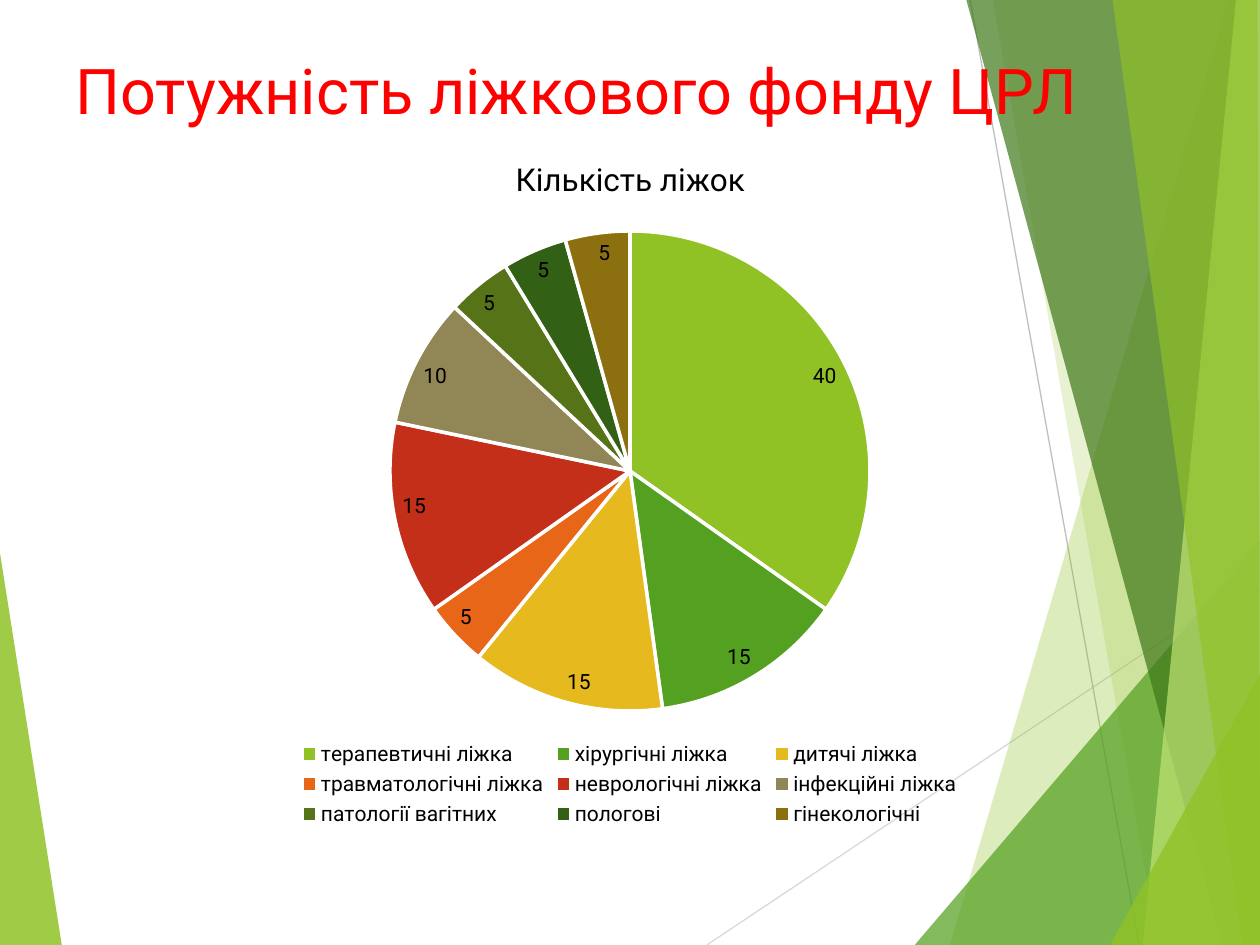
from dataclasses import dataclass

from pptx import Presentation
from pptx.chart.data import CategoryChartData
from pptx.dml.color import RGBColor
from pptx.enum.chart import XL_CHART_TYPE, XL_LABEL_POSITION, XL_LEGEND_POSITION
from pptx.enum.shapes import MSO_CONNECTOR
from pptx.enum.text import MSO_ANCHOR, PP_ALIGN
from pptx.oxml import parse_xml
from pptx.oxml.ns import nsdecls, qn
from pptx.oxml.xmlchemy import OxmlElement
from pptx.util import Inches, Pt

FONT = "Roboto"
BLACK = RGBColor(0x00, 0x00, 0x00)
WHITE = RGBColor(0xFF, 0xFF, 0xFF)
RED = RGBColor(0xFF, 0x00, 0x00)
LIME = RGBColor(0x90, 0xC2, 0x26)
GREEN = RGBColor(0x54, 0xA0, 0x21)
DARK_GREEN = RGBColor(0x3F, 0x78, 0x19)
PALE_LIME = RGBColor(0xC0, 0xE4, 0x74)
LIGHT_GRAY = RGBColor(0xD9, 0xD9, 0xD9)
GRAY = RGBColor(0xBF, 0xBF, 0xBF)
YELLOW = RGBColor(0xE6, 0xB9, 0x1E)
ORANGE = RGBColor(0xE7, 0x66, 0x18)
BRICK = RGBColor(0xC4, 0x2F, 0x1A)
KHAKI = RGBColor(0x91, 0x86, 0x55)
OLIVE = RGBColor(0x56, 0x74, 0x17)
FOREST = RGBColor(0x32, 0x60, 0x14)
BROWN = RGBColor(0x8C, 0x70, 0x10)

Point = tuple[float, float]


@dataclass
class Facet:
    points: list[Point]
    color: RGBColor
    opacity: int


@dataclass
class Ray:
    start: Point
    end: Point
    color: RGBColor


@dataclass
class Ward:
    name: str
    beds: int
    color: RGBColor


LEFT_FACET = Facet([(0, 4.39), (0.49, 7.5), (0, 7.5)], LIME, 85)
RAYS = [
    Ray((5.61, 7.5), (10, 4.57), LIGHT_GRAY),
    Ray((7.7, 0), (9.04, 7.5), GRAY),
]
RIGHT_FACETS = [
    Facet([(9.75, 0), (7.54, 7.5), (10, 7.5), (10, 0)], LIME, 30),
    Facet([(7.88, 0), (9.19, 7.5), (10, 7.5), (10, 0)], LIME, 20),
    Facet([(7.26, 7.5), (10, 4.29), (10, 7.5)], GREEN, 72),
    Facet([(7.67, 0), (9.7, 7.5), (10, 7.5), (10, 0)], DARK_GREEN, 70),
    Facet([(9.81, 0), (9.07, 7.5), (10, 7.5), (10, 0)], PALE_LIME, 70),
    Facet([(8.83, 0), (9.86, 7.5), (10, 7.5), (9.98, 0)], LIME, 65),
    Facet([(8.81, 7.5), (10, 5.35), (10, 7.5)], LIME, 80),
]
WARDS = [
    Ward("терапевтичні ліжка", 40, LIME),
    Ward("хірургічні ліжка", 15, GREEN),
    Ward("дитячі ліжка", 15, YELLOW),
    Ward("травматологічні ліжка", 5, ORANGE),
    Ward("неврологічні ліжка", 15, BRICK),
    Ward("інфекційні ліжка", 10, KHAKI),
    Ward("патології вагітних", 5, OLIVE),
    Ward("пологові", 5, FOREST),
    Ward("гінекологічні", 5, BROWN),
]


def draw_facet(page, facet: Facet) -> None:
    corners = [(Inches(x), Inches(y)) for x, y in facet.points]
    builder = page.shapes.build_freeform(*corners[0])
    builder.add_line_segments(corners[1:], close=True)
    shape = builder.convert_to_shape()
    shape.shadow.inherit = False
    shape.line.fill.background()
    shape.fill.solid()
    shape.fill.fore_color.rgb = facet.color
    alpha = OxmlElement("a:alpha")
    alpha.set("val", str(facet.opacity * 1000))
    next(shape.element.iter(qn("a:srgbClr"))).append(alpha)


def draw_ray(page, ray: Ray) -> None:
    ends = [Inches(value) for value in ray.start + ray.end]
    connector = page.shapes.add_connector(MSO_CONNECTOR.STRAIGHT, *ends)
    connector.line.color.rgb = ray.color
    connector.line.width = Pt(0.75)
    connector.element.spPr.append(OxmlElement("a:effectLst"))


def style_font(font, size: float, color: RGBColor) -> None:
    font.name = FONT
    font.size = Pt(size)
    font.bold = False
    font.color.rgb = color


def place_title(page) -> None:
    title = page.shapes.title
    title.left, title.top = Inches(0.5), Inches(0.36)
    title.width, title.height = Inches(9), Inches(1.25)
    title.text_frame.text = "Потужність ліжкового фонду ЦРЛ"
    title.text_frame.vertical_anchor = MSO_ANCHOR.TOP
    para = title.text_frame.paragraphs[0]
    para.alignment = PP_ALIGN.LEFT
    style_font(para.font, 36, RED)
    title.element.getparent().append(title.element)


def layout_xml(inner: bool, **fractions: float):
    target = '<c:layoutTarget val="inner"/>' if inner else ""
    modes = '<c:xMode val="edge"/><c:yMode val="edge"/>'
    values = "".join(f'<c:{key} val="{value}"/>' for key, value in fractions.items())
    return parse_xml(
        f"<c:layout {nsdecls('c')}><c:manualLayout>{target}{modes}{values}"
        "</c:manualLayout></c:layout>"
    )


def set_layout(parent, before: str, layout) -> None:
    for old in parent.findall(qn("c:layout")):
        parent.remove(old)
    parent.find(qn(before)).addprevious(layout)


def add_bed_chart(page) -> None:
    data = CategoryChartData()
    data.categories = [ward.name for ward in WARDS]
    data.add_series("Кількість ліжок", [ward.beds for ward in WARDS])
    frame = page.shapes.add_chart(
        XL_CHART_TYPE.PIE, Inches(0.67), Inches(0.99), Inches(8.66), Inches(5.61), data
    )
    chart = frame.chart
    style_font(chart.font, 10, BLACK)

    chart.has_title = True
    chart.chart_title.text_frame.text = "Кількість ліжок"
    style_font(chart.chart_title.text_frame.paragraphs[0].font, 18, BLACK)
    chart.chart_title.include_in_layout = False
    set_layout(chart.chart_title.element, "c:overlay", layout_xml(False, x=0.39, y=0.04))

    chart.has_legend = True
    chart.legend.position = XL_LEGEND_POSITION.BOTTOM
    chart.legend.include_in_layout = False
    style_font(chart.legend.font, 12, BLACK)

    plot = chart.plots[0]
    plot.vary_by_categories = True
    plot.has_data_labels = True
    labels = plot.data_labels
    labels.show_value = True
    labels.show_percentage = False
    labels.position = XL_LABEL_POSITION.INSIDE_END
    style_font(labels.font, 12, BLACK)
    for index, ward in enumerate(WARDS):
        slice_format = plot.series[0].points[index].format
        slice_format.fill.solid()
        slice_format.fill.fore_color.rgb = ward.color
        slice_format.line.color.rgb = WHITE
        slice_format.line.width = Pt(2)

    plot_area = next(chart.element.iter(qn("c:plotArea")))
    set_layout(plot_area, "c:pieChart", layout_xml(True, x=0.28, y=0.15, w=0.44, h=0.68))


def main() -> None:
    deck = Presentation()
    deck.slide_width, deck.slide_height = Inches(10), Inches(7.5)
    page = deck.slides.add_slide(deck.slide_layouts[5])
    draw_facet(page, LEFT_FACET)
    for ray in RAYS:
        draw_ray(page, ray)
    for facet in RIGHT_FACETS:
        draw_facet(page, facet)
    place_title(page)
    add_bed_chart(page)
    deck.save("out.pptx")


if __name__ == "__main__":
    main()
